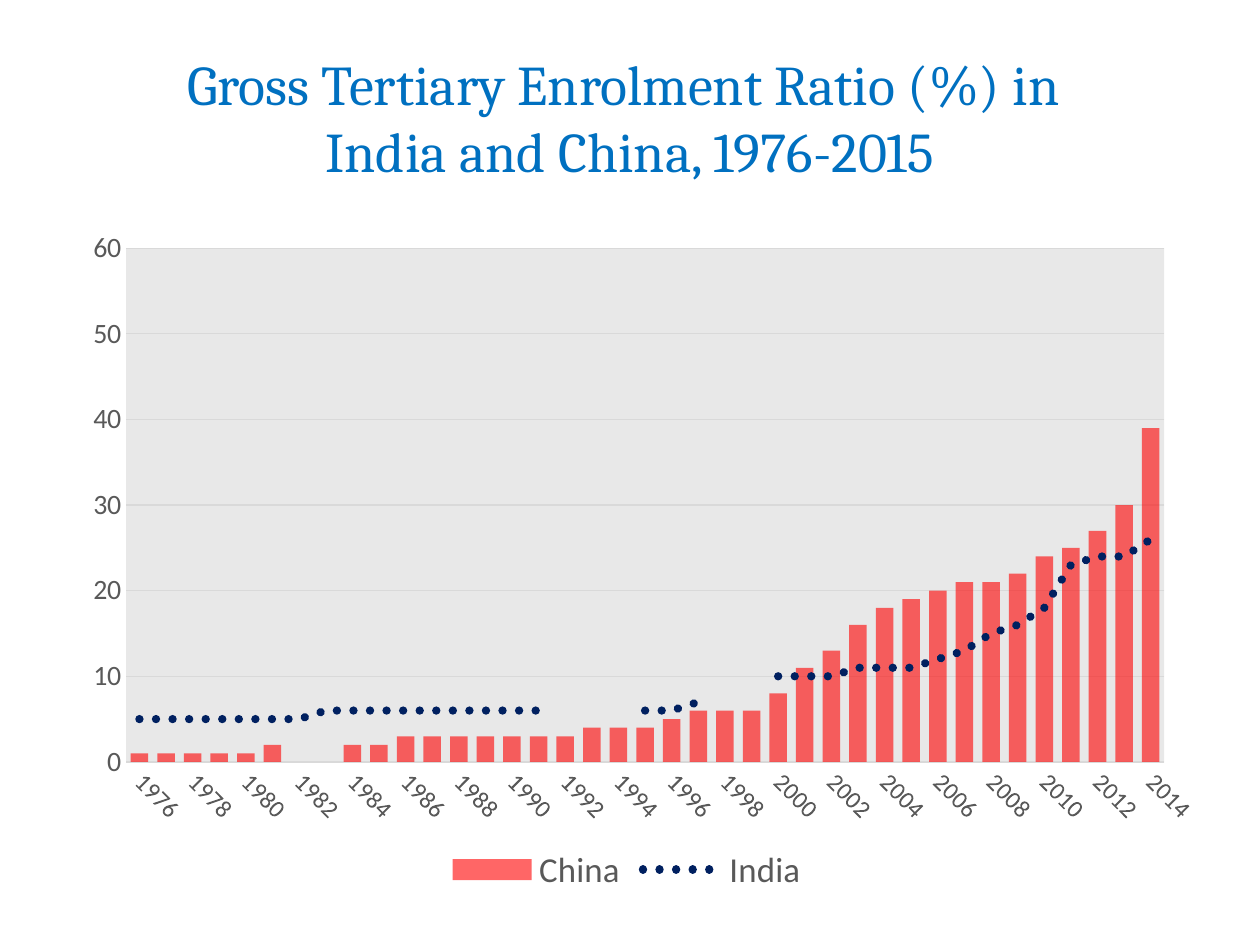
from dataclasses import dataclass

from lxml import etree
from pptx import Presentation
from pptx import util as u
from pptx.chart import data
from pptx.dml.color import RGBColor
from pptx.enum import chart as ch, dml, text
from pptx.oxml import parse_xml
from pptx.oxml.ns import nsdecls, qn


@dataclass(frozen=True)
class Theme:
    head: str = "0070C0"
    label: str = "595959"
    grid: str = "D9D9D9"
    china: str = "FF0000"
    india: str = "002060"
    serif: str = "Cambria"
    sans: str = "Calibri"
    head_size: int = 32
    key_size: int = 20
    val_size: int = 16
    year_size: int = 14


THEME = Theme()
YEARS = range(1976, 2015)
CHINA = [1, 1, 1, 1, 1, 2, None, None, 2, 2, 3, 3, 3, 3, 3, 3, 3, 4, 4, 4,
         5, 6, 6, 6, 8, 11, 13, 16, 18, 19, 20, 21, 21, 22, 24, 25, 27, 30, 39]
INDIA = [5, 5, 5, 5, 5, 5, 5, 6, 6, 6, 6, 6, 6, 6, 6, 6, None, None, None, 6,
         6, 7, None, None, 10, 10, 10, 11, 11, 11, 12, 13, 15, 16, 18, 23, 24, 24, 26]


def style(font, size, color=THEME.label, face=THEME.sans):
    font.size, font.name, font.bold = u.Pt(size), face, False
    font.color.rgb = RGBColor.from_string(color)


def write(frame, words, size, color, face, align=text.PP_ALIGN.CENTER):
    frame.word_wrap = True
    frame.vertical_anchor = text.MSO_ANCHOR.MIDDLE
    para = frame.paragraphs[0]
    para.text, para.alignment = words, align
    for run in para.runs:
        style(run.font, size, color, face)


def rule(line, color, width):
    line.color.rgb = RGBColor.from_string(color)
    line.width = u.Pt(width)


def add_title(slide, box):
    title = slide.shapes.title
    title.left, title.top, title.width, title.height = map(u.Inches, box)
    write(title.text_frame, "Gross Tertiary Enrolment Ratio (%) in \vIndia and China, 1976-2015",
          THEME.head_size, THEME.head, THEME.serif)


def split_line(chart):
    """Move the second series to a line plot on the same axes."""
    bars = chart.plots[0]
    bar = chart.element.find(".//" + qn("c:barChart"))
    ser = bars.series[1].format and bar.findall(qn("c:ser"))[1]
    flip = ser.find(qn("c:invertIfNegative"))
    if flip is not None:
        ser.remove(flip)
    line = parse_xml(f'<c:lineChart {nsdecls("c")}><c:grouping val="standard"/>'
                     '<c:varyColors val="0"/><c:marker val="1"/></c:lineChart>')
    line.insert(2, ser)
    for axis in bar.findall(qn("c:axId")):
        etree.SubElement(line, qn("c:axId")).set("val", axis.get("val"))
    bar.addnext(line)


def set_plot(chart, box):
    """Place the inner plot area and give it a clear grey fill."""
    area = chart.element.find(".//" + qn("c:plotArea"))
    for old in area.findall(qn("c:layout")):
        area.remove(old)
    spots = "".join(f'<c:{key} val="{val}"/>' for key, val in zip("xywh", box))
    area.insert(0, parse_xml(
        f'<c:layout {nsdecls("c")}><c:manualLayout><c:layoutTarget val="inner"/>'
        f'<c:xMode val="edge"/><c:yMode val="edge"/>{spots}</c:manualLayout></c:layout>'))
    area.append(parse_xml(
        f'<c:spPr {nsdecls("c", "a")}><a:solidFill><a:srgbClr val="{THEME.grid}">'
        '<a:alpha val="60000"/></a:srgbClr></a:solidFill><a:ln><a:noFill/></a:ln></c:spPr>'))


def set_axes(chart):
    years, vals = chart.category_axis, chart.value_axis
    for axis, size in ((years, THEME.year_size), (vals, THEME.val_size)):
        axis.major_tick_mark = axis.minor_tick_mark = ch.XL_TICK_MARK.NONE
        style(axis.tick_labels.font, size)
    rule(years.format.line, THEME.grid, 0.75)
    body = years.tick_labels.font and chart.element.find(".//" + qn("c:catAx")).find(
        qn("c:txPr")).find(qn("a:bodyPr"))
    body.set("rot", "2700000")
    chart.element.find(".//" + qn("c:lblOffset")).addnext(
        parse_xml(f'<c:tickLblSkip {nsdecls("c")} val="2"/>'))
    vals.minimum_scale, vals.maximum_scale, vals.major_unit = 0, 60, 10
    vals.tick_labels.number_format = "General"
    vals.format.line.fill.background()
    rule(vals.major_gridlines.format.line, THEME.grid, 0.75)


def add_graph(slide, box):
    table = data.CategoryChartData()
    table.categories = YEARS
    table.add_series("China", CHINA)
    table.add_series("India", INDIA)
    chart = slide.shapes.add_chart(ch.XL_CHART_TYPE.COLUMN_CLUSTERED,
                                   *map(u.Inches, box), table).chart
    chart.has_title = False
    style(chart.font, 10, "000000")
    split_line(chart)
    set_axes(chart)
    set_plot(chart, (0.056, 0.041, 0.921, 0.758))

    # Clear red columns
    bars, lines = chart.plots
    bars.gap_width, bars.overlap, bars.vary_by_categories = 52, -100, False
    china, india = bars.series[0], lines.series[0]
    china.format.fill.solid()
    china.format.fill.fore_color.rgb = RGBColor.from_string(THEME.china)
    tint = chart.element.find(".//" + qn("c:barChart")).find(".//" + qn("a:srgbClr"))
    etree.SubElement(tint, qn("a:alpha")).set("val", "60000")

    # Dotted line with round ends
    rule(india.format.line, THEME.india, 4.75)
    india.format.line.dash_style = dml.MSO_LINE.ROUND_DOT
    india.marker.style = ch.XL_MARKER_STYLE.NONE
    india.smooth = False
    chart.element.find(".//" + qn("c:lineChart")).find(".//" + qn("a:ln")).set("cap", "rnd")

    # Legend
    chart.has_legend = True
    chart.legend.position = ch.XL_LEGEND_POSITION.BOTTOM
    chart.legend.include_in_layout = False
    style(chart.legend.font, THEME.key_size)


def main():
    deck = Presentation()
    deck.slide_width, deck.slide_height = u.Inches(10), u.Inches(7.5)
    slide = deck.slides.add_slide(deck.slide_layouts[5])
    add_title(slide, (0.5, 0.3, 9, 1.25))
    add_graph(slide, (0.5, 1.75, 9, 5.38))
    deck.save("out.pptx")


if __name__ == "__main__":
    main()
